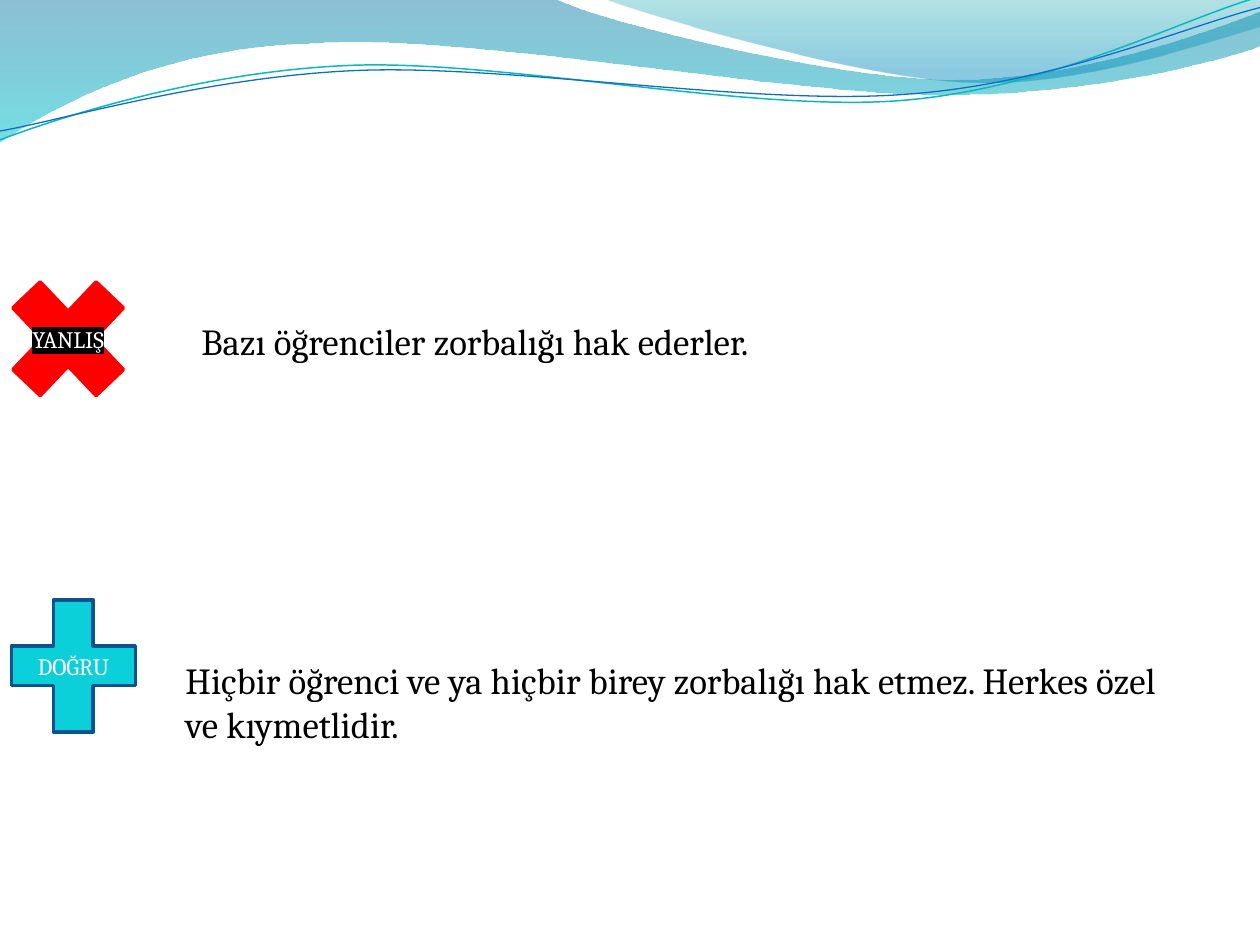
import lxml.etree
import pptx
import pptx.dml.color
import pptx.enum.shapes
import pptx.enum.text
import pptx.oxml.ns
import pptx.util

Cm = pptx.util.Cm
SHAPES = pptx.enum.shapes.MSO_SHAPE
FONT = "Cambria"

UPPER_WAVE = [
    [(0, 0)], [(4.4, -0.01)],
    [(4.76, 0.17), (6.64, 0.63), (7.58, 0.63)],
    [(8.53, 0.63), (9.58, 0.26), (10, 0.09)],
    [(10.01, 0.36)],
    [(9.83, 0.44), (8.7, 0.76), (7.46, 0.75)],
    [(6.22, 0.75), (3.82, 0.28), (2.57, 0.34)],
    [(1.29, 0.36), (0.46, 0.83), (-0.01, 1.13)],
    [(0, 0)],
]
RIGHT_WAVE = [
    [(4.79, -0.01)],
    [(5.09, 0.11), (6.82, 0.62), (7.69, 0.65)],
    [(8.56, 0.69), (9.61, 0.32), (10, 0.21)],
    [(10, 0)],
    [(4.79, -0.01)],
]
TEAL_STRAND = [
    [(0, 1.11)],
    [(0.48, 0.93), (1.58, 0.57), (2.77, 0.52)],
    [(3.95, 0.47), (5.93, 0.89), (7.13, 0.8)],
    [(8.33, 0.71), (9.38, 0.15), (9.98, -0.02)],
]
BLUE_STRAND = [
    [(0, 1.04)],
    [(0.47, 0.96), (1.64, 0.61), (2.83, 0.56)],
    [(4.03, 0.51), (5.97, 0.84), (7.17, 0.75)],
    [(8.36, 0.67), (9.41, 0.21), (10, 0.06)],
]


def color(hex_value):
    return pptx.dml.color.RGBColor.from_string(hex_value)


def add_xml(parent, tag, **attributes):
    return lxml.etree.SubElement(parent, pptx.oxml.ns.qn(tag), **attributes)


def bend_lines(outline, segments):
    steps = iter(list(outline.element.spPr.iter(pptx.oxml.ns.qn("a:lnTo"))))
    for segment in segments[1:]:
        step = next(steps)
        if len(segment) == 3:
            curve = add_xml(step.getparent(), "a:cubicBezTo")
            step.addprevious(curve)
            for line in (step, next(steps), next(steps)):
                curve.append(line[0])
                line.getparent().remove(line)


def add_outline(slide, box, segments, close):
    left, top, width = box
    unit = width / 10
    points = [(Cm(left + x * unit), Cm(top + y * unit))
              for segment in segments for x, y in segment]
    builder = slide.shapes.build_freeform(*points[0])
    builder.add_line_segments(points[1:], close=close)
    outline = builder.convert_to_shape()
    bend_lines(outline, segments)
    outline.shadow.inherit = False
    return outline


def add_wave_header(slide, box):
    waves = [
        (UPPER_WAVE, [(0, "0074A1", 45), (1, "00C6CF", 55)]),
        (RIGHT_WAVE, [(0, "00A1A9", 30), (0.8, "008BBF", 45)]),
    ]
    for segments, stops in waves:
        wave = add_outline(slide, box, segments, True)
        wave.line.fill.background()
        wave.fill.gradient()
        wave.fill.gradient_angle = 270
        for stop, (position, hex_value, _) in zip(wave.fill.gradient_stops, stops):
            stop.position = position
            stop.color.rgb = color(hex_value)
        tints = wave.element.spPr.iter(pptx.oxml.ns.qn("a:srgbClr"))
        for tint, (_, _, opacity) in zip(list(tints), stops):
            add_xml(tint, "a:alpha", val=str(opacity * 1000))

    for segments, hex_value, weight in [
        (TEAL_STRAND, "0AB8BF", 0.85),
        (BLUE_STRAND, "0F6FC6", 0.75),
    ]:
        strand = add_outline(slide, box, segments, False)
        strand.fill.background()
        strand.line.color.rgb = color(hex_value)
        strand.line.width = pptx.util.Pt(weight)


def write(frame, text, size, hex_value):
    frame.word_wrap = True
    frame.text = text
    run = frame.paragraphs[0].runs[0]
    run.font.name = FONT
    run.font.size = pptx.util.Pt(size)
    run.font.color.rgb = color(hex_value)
    return run


def add_statement(slide, box, symbol, symbol_size, fill, border, verdict,
                  statement, statement_box, highlight=None):
    left, top = box
    mark = slide.shapes.add_shape(symbol, Cm(left), Cm(top), *map(Cm, symbol_size))
    mark.shadow.inherit = False
    mark.fill.solid()
    mark.fill.fore_color.rgb = color(fill)
    mark.line.color.rgb = color(border)
    mark.line.width = pptx.util.Pt(2)
    label = write(mark.text_frame, verdict, 13.5, "FFFFFF")
    mark.text_frame.vertical_anchor = pptx.enum.text.MSO_ANCHOR.MIDDLE
    mark.text_frame.paragraphs[0].alignment = pptx.enum.text.PP_ALIGN.CENTER
    if highlight:
        properties = label.font._element
        marker = add_xml(properties, "a:highlight")
        add_xml(marker, "a:srgbClr", val=highlight)
        properties.find(pptx.oxml.ns.qn("a:solidFill")).addnext(marker)

    dx, dy, width, height = statement_box
    sentence = slide.shapes.add_textbox(Cm(left + dx), Cm(top + dy), Cm(width), Cm(height))
    write(sentence.text_frame, statement, 21, "000000")
    sentence.text_frame.auto_size = pptx.enum.text.MSO_AUTO_SIZE.SHAPE_TO_FIT_TEXT


def main():
    presentation = pptx.Presentation()
    presentation.slide_width = Cm(25.4)
    presentation.slide_height = Cm(19.05)
    slide = presentation.slides.add_slide(presentation.slide_layouts[6])
    add_wave_header(slide, (0, 0, 25.4))
    add_statement(slide, (-0.24, 5.13), SHAPES.MATH_MULTIPLY, (3.23, 3.4),
                  "FF0000", "FF0000", "YANLIŞ",
                  "Bazı öğrenciler zorbalığı hak ederler.",
                  (4.05, 1.17, 13.94, 1.14), highlight="000000")
    add_statement(slide, (-0.22, 11.61), SHAPES.MATH_PLUS, (3.4, 3.63),
                  "0BD0D9", "0B5292", "DOĞRU",
                  "Hiçbir öğrenci ve ya hiçbir birey zorbalığı hak etmez. "
                  "Herkes özel ve kıymetlidir.",
                  (3.71, 1.52, 20.52, 2.06))
    presentation.save("out.pptx")


if __name__ == "__main__":
    main()
